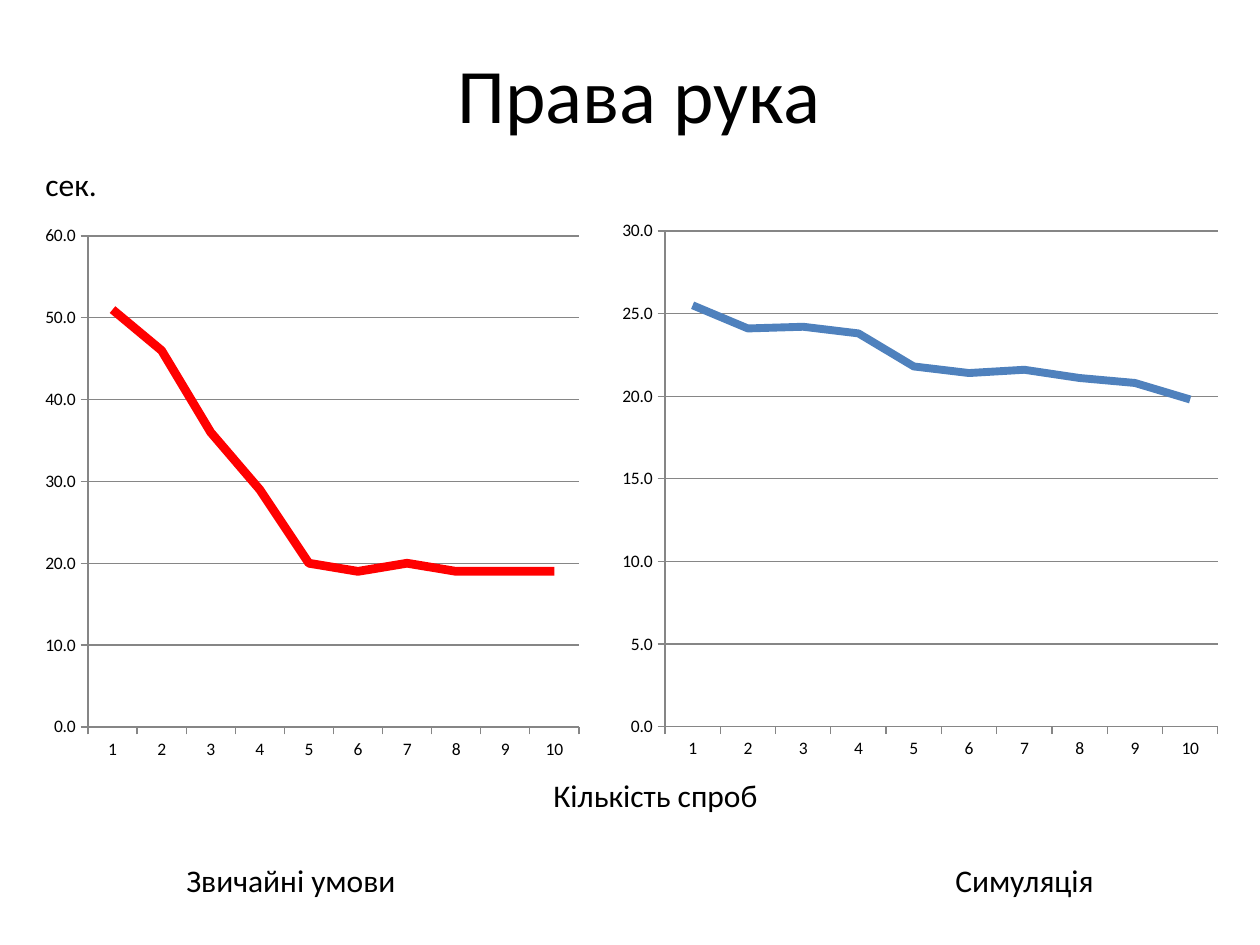
import pptx
import pptx.util
import pptx.chart.data
import pptx.enum.chart
import pptx.enum.text
import pptx.dml.color
import pptx.oxml

PX = 914400 // 126
FONT = "Calibri"
COLORS = {"text": "000000", "grid": "868686", "red": "FF0000", "blue": "4F81BD"}

TITLE = ("Права рука", (72, 30, 1134, 125))
LABELS = [
    ("сек.", (33, 159, 78, 50)),
    ("Кількість спроб", (541, 770, 232, 50)),
    ("Звичайні умови", (174, 855, 237, 50)),
    ("Симуляція", (943, 855, 165, 50)),
]
# box and plot: left, top, width, height in px
CHARTS = [
    {"box": (35, 214, 556, 556), "plot": (88, 236, 491, 491),
     "max": 60, "step": 10, "color": "red", "line": 5,
     "vals": [51, 46, 36, 29, 20, 19, 20, 19, 19, 19]},
    {"box": (610, 210, 620, 561), "plot": (665, 231, 553, 496),
     "max": 30, "step": 5, "color": "blue", "line": 4.5,
     "vals": [25.5, 24.1, 24.2, 23.8, 21.8, 21.4, 21.6, 21.1, 20.8, 19.8]},
]


def emu(box):
    return [n * PX for n in box]


def tint(name):
    return pptx.dml.color.RGBColor.from_string(COLORS[name])


def style(font, size):
    font.name = FONT
    font.size = pptx.util.Pt(size)
    font.color.rgb = tint("text")


def write(slide, text, box, size=18, wrap=False, align="LEFT", anchor="TOP"):
    frame = slide.shapes.add_textbox(*emu(box)).text_frame
    frame.word_wrap = wrap
    frame.vertical_anchor = getattr(pptx.enum.text.MSO_ANCHOR, anchor)
    para = frame.paragraphs[0]
    para.alignment = getattr(pptx.enum.text.PP_ALIGN, align)
    run = para.add_run()
    run.text = text
    style(run.font, size)


def stroke(line, color, width):
    line.color.rgb = tint(color)
    line.width = pptx.util.Pt(width)


def place(chart, box, plot):
    """Fix the inner plot area as fractions of the chart box."""
    parts = {
        "x": (plot[0] - box[0]) / box[2],
        "y": (plot[1] - box[1]) / box[3],
        "w": plot[2] / box[2],
        "h": plot[3] / box[3],
    }
    modes = '<c:layoutTarget val="inner"/><c:xMode val="edge"/><c:yMode val="edge"/>'
    sizes = "".join(f'<c:{key} val="{val:.4f}"/>' for key, val in parts.items())
    ns = "http://schemas.openxmlformats.org/drawingml/2006/chart"
    area = chart.element.find(f".//{{{ns}}}plotArea")
    for old in area.findall(f"{{{ns}}}layout"):
        area.remove(old)
    area.insert(0, pptx.oxml.parse_xml(
        f'<c:layout xmlns:c="{ns}"><c:manualLayout>{modes}{sizes}</c:manualLayout></c:layout>'))


def draw(slide, item):
    enums = pptx.enum.chart
    data = pptx.chart.data.CategoryChartData(number_format="0.0")
    data.categories = [str(n + 1) for n in range(len(item["vals"]))]
    data.add_series("Series 1", item["vals"])
    chart = slide.shapes.add_chart(
        enums.XL_CHART_TYPE.LINE, *emu(item["box"]), data).chart
    chart.has_legend = False
    chart.has_title = False
    style(chart.font, 10)

    plot = chart.plots[0]
    plot.vary_by_categories = False
    curve = plot.series[0]
    curve.smooth = False
    curve.marker.style = enums.XL_MARKER_STYLE.NONE
    stroke(curve.format.line, item["color"], item["line"])

    for axis in (chart.category_axis, chart.value_axis):
        axis.major_tick_mark = enums.XL_TICK_MARK.OUTSIDE
        axis.minor_tick_mark = enums.XL_TICK_MARK.NONE
        stroke(axis.format.line, "grid", 0.75)
    axis = chart.value_axis
    axis.minimum_scale = 0
    axis.maximum_scale = item["max"]
    axis.major_unit = item["step"]
    axis.has_major_gridlines = True
    stroke(axis.major_gridlines.format.line, "grid", 0.75)
    axis.tick_labels.number_format = "0.0"
    axis.tick_labels.number_format_is_linked = False
    place(chart, item["box"], item["plot"])


def main():
    deck = pptx.Presentation()
    deck.slide_width, deck.slide_height = emu((1260, 945))
    slide = deck.slides.add_slide(deck.slide_layouts[6])
    write(slide, *TITLE, size=44, wrap=True, align="CENTER", anchor="MIDDLE")
    for item in CHARTS:
        draw(slide, item)
    for text, box in LABELS:
        write(slide, text, box)
    deck.save("out.pptx")


if __name__ == "__main__":
    main()
